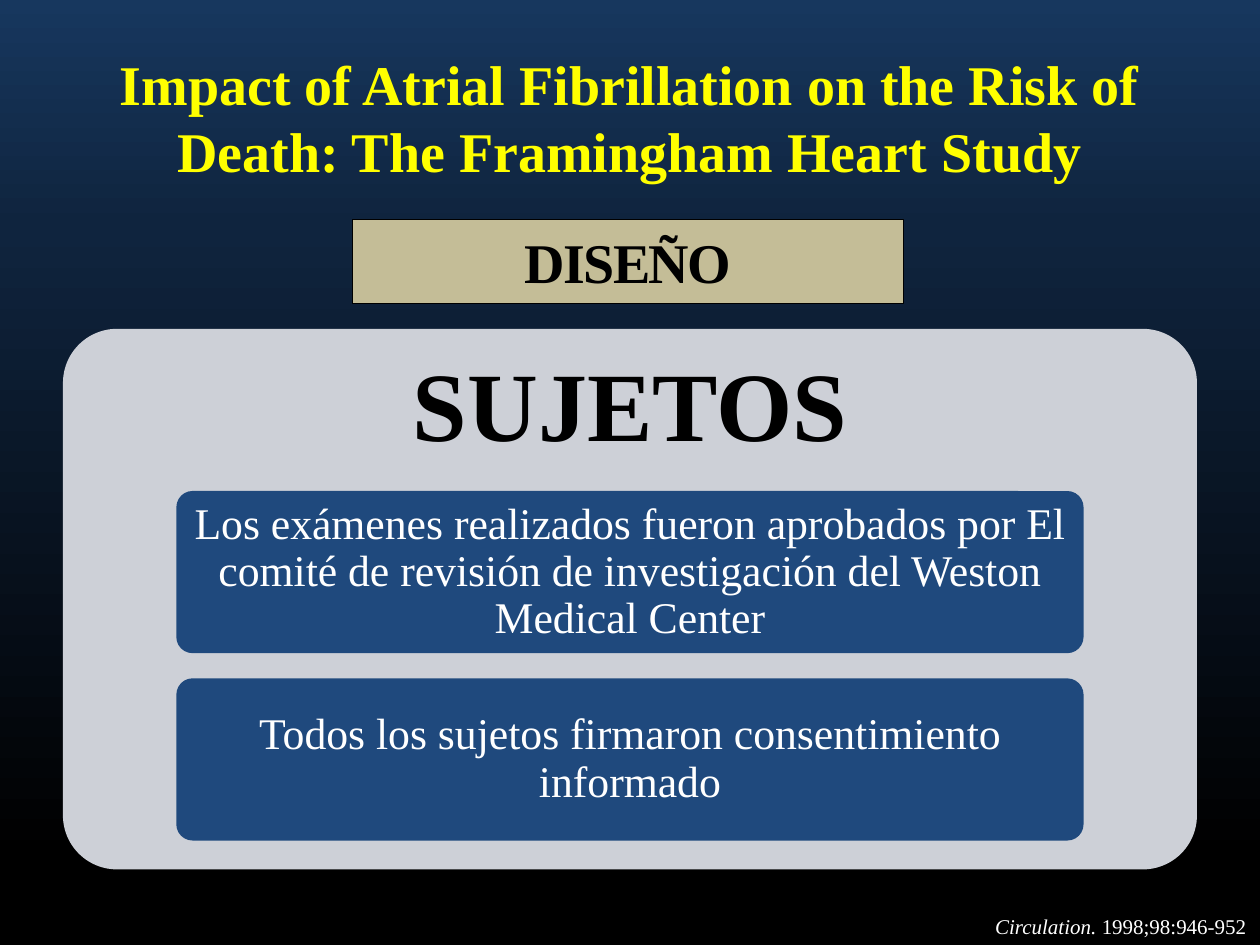
from copy import deepcopy
from dataclasses import dataclass

from pptx import Presentation
from pptx.dml.color import RGBColor
from pptx.enum.shapes import MSO_SHAPE
from pptx.enum.text import MSO_ANCHOR, PP_ALIGN
from pptx.oxml.ns import qn
from pptx.util import Pt


@dataclass(frozen=True)
class Theme:
    font: str = "Times New Roman"
    sky: tuple = ((0, "17375E"), (0.24, "0F243E"), (0.91, "000000"))
    yellow: str = "FFFF00"
    black: str = "000000"
    white: str = "FFFFFF"
    tan: str = "C4BD97"
    panel: str = "CDD0D7"
    navy: str = "1F497D"
    title: int = 32
    heading: int = 56
    body: int = 25
    citation: int = 12


THEME = Theme()


def color(value):
    return RGBColor.from_string(value)


def write(box, text, size, ink, bold=False, italic=False, align=PP_ALIGN.CENTER,
          leading=None, tracking=0, insets=(7.2, 3.6), wrap=True):
    frame = box.text_frame
    frame.word_wrap = wrap
    frame.vertical_anchor = MSO_ANCHOR.MIDDLE
    frame.margin_left = frame.margin_right = Pt(insets[0])
    frame.margin_top = frame.margin_bottom = Pt(insets[1])
    para = frame.paragraphs[0]
    para.alignment = align
    if leading:
        para.line_spacing = leading
    span = para.add_run()
    span.text = text
    font = span.font
    font.name, font.size = THEME.font, Pt(size)
    font.bold, font.italic = bold, italic
    font.color.rgb = color(ink)
    if tracking:
        font._element.set("spc", str(tracking * 100))


def add_text_box(page, left, top, width, height):
    return page.shapes.add_textbox(Pt(left), Pt(top), Pt(width), Pt(height))


def add_block(page, kind, left, top, width, height, fill, line=None):
    block = page.shapes.add_shape(kind, Pt(left), Pt(top), Pt(width), Pt(height))
    block.shadow.inherit = False
    block.fill.solid()
    block.fill.fore_color.rgb = color(fill)
    if line:
        block.line.color.rgb = color(line)
        block.line.width = Pt(0.75)
    else:
        block.line.fill.background()
    if kind == MSO_SHAPE.ROUNDED_RECTANGLE:
        block.adjustments[0] = 0.1
    return block


def paint_background(page):
    fill = page.background.fill
    fill.gradient()
    stop_list = page._element.find(f".//{qn('a:gsLst')}")
    stop_list.append(deepcopy(stop_list[-1]))
    for stop, (position, value) in zip(fill.gradient_stops, THEME.sky):
        stop.position = position
        stop.color.rgb = color(value)
    fill.gradient_angle = 270


def add_title(page, left, top, width, height, text):
    box = add_text_box(page, left, top, width, height)
    write(box, text, THEME.title, THEME.yellow, bold=True)


def add_section_label(page, left, top, width, height, text):
    box = add_block(page, MSO_SHAPE.RECTANGLE, left, top, width, height,
                    THEME.tan, THEME.black)
    write(box, text, THEME.title, THEME.black, bold=True, tracking=-1)


def add_subject_panel(page, left, top, width, height, heading, statements):
    rounded = MSO_SHAPE.ROUNDED_RECTANGLE
    add_block(page, rounded, left, top, width, height, THEME.panel)
    row_height = height * 0.3
    heading_box = add_text_box(page, left, top, width, row_height)
    write(heading_box, heading, THEME.heading, THEME.black, bold=True,
          leading=0.9, insets=(16.8, 16.8))
    pitch = row_height + 14.4
    for index, statement in enumerate(statements):
        card = add_block(page, rounded, left + width * 0.1,
                         top + row_height + index * pitch,
                         width * 0.8, row_height, THEME.navy)
        write(card, statement, THEME.body, THEME.white, leading=0.9,
              insets=(5, 3.75))


def add_citation(page, left, top, width, height, journal, reference):
    box = add_text_box(page, left, top, width, height)
    for text, italic in ((journal, True), (reference, False)):
        write(box, text, THEME.citation, THEME.white, italic=italic,
              align=PP_ALIGN.LEFT, wrap=False)


def main():
    deck = Presentation()
    deck.slide_width, deck.slide_height = Pt(720), Pt(540)
    page = deck.slides.add_slide(deck.slide_layouts[6])
    paint_background(page)
    add_title(page, 36, 21.6, 648, 90,
              "Impact of Atrial Fibrillation on the Risk of Death: "
              "The Framingham Heart Study")
    add_section_label(page, 201.6, 125.3, 314.6, 48.2, "DISEÑO")
    add_subject_panel(page, 36, 187.9, 648, 308.9, "SUJETOS", (
        "Los exámenes realizados fueron aprobados por El comité de revisión "
        "de investigación del Weston Medical Center",
        "Todos los sujetos firmaron consentimiento informado",
    ))
    add_citation(page, 561.6, 518.4, 159.8, 21.6,
                 "Circulation. ", "1998;98:946-952")
    deck.save("out.pptx")


if __name__ == "__main__":
    main()
